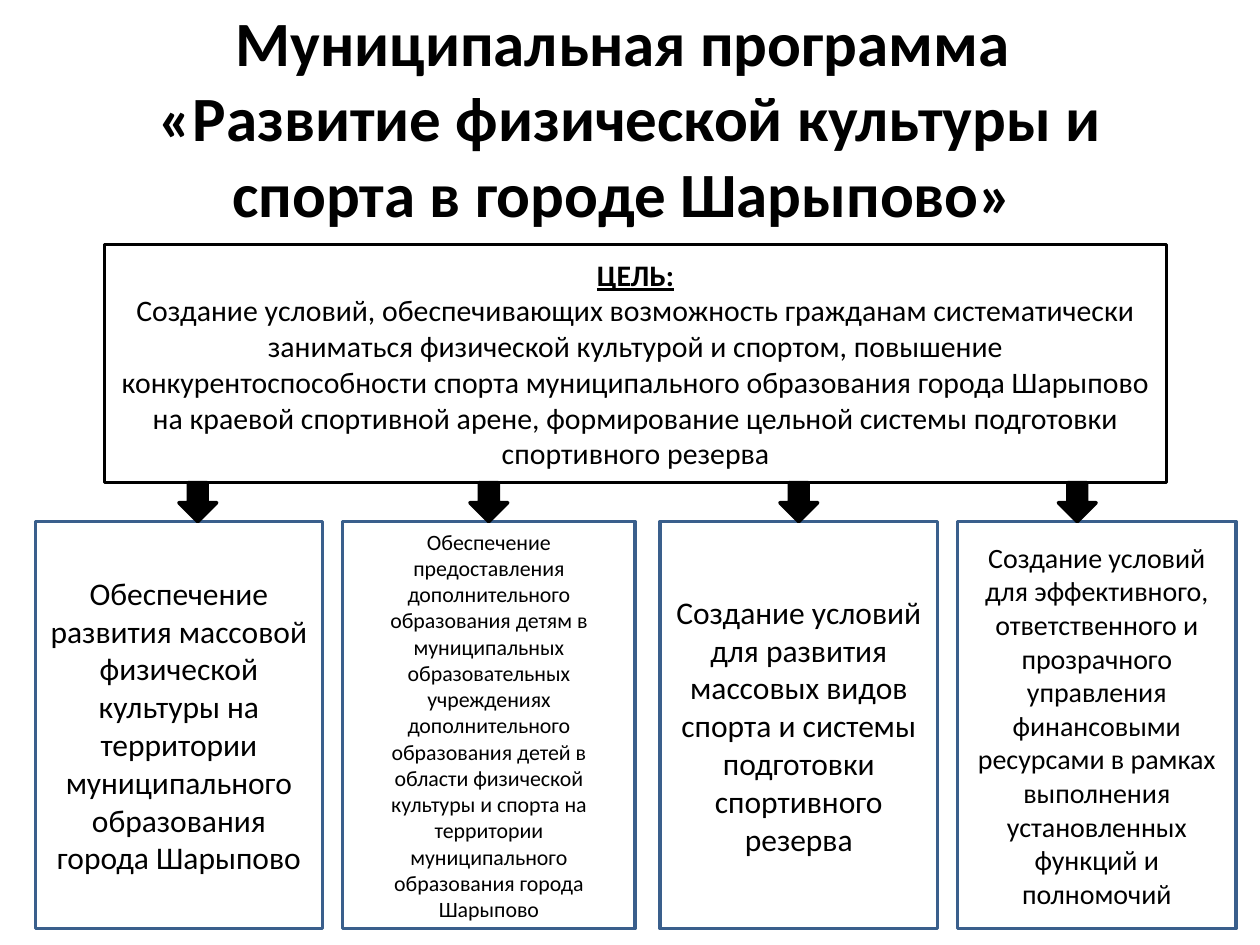
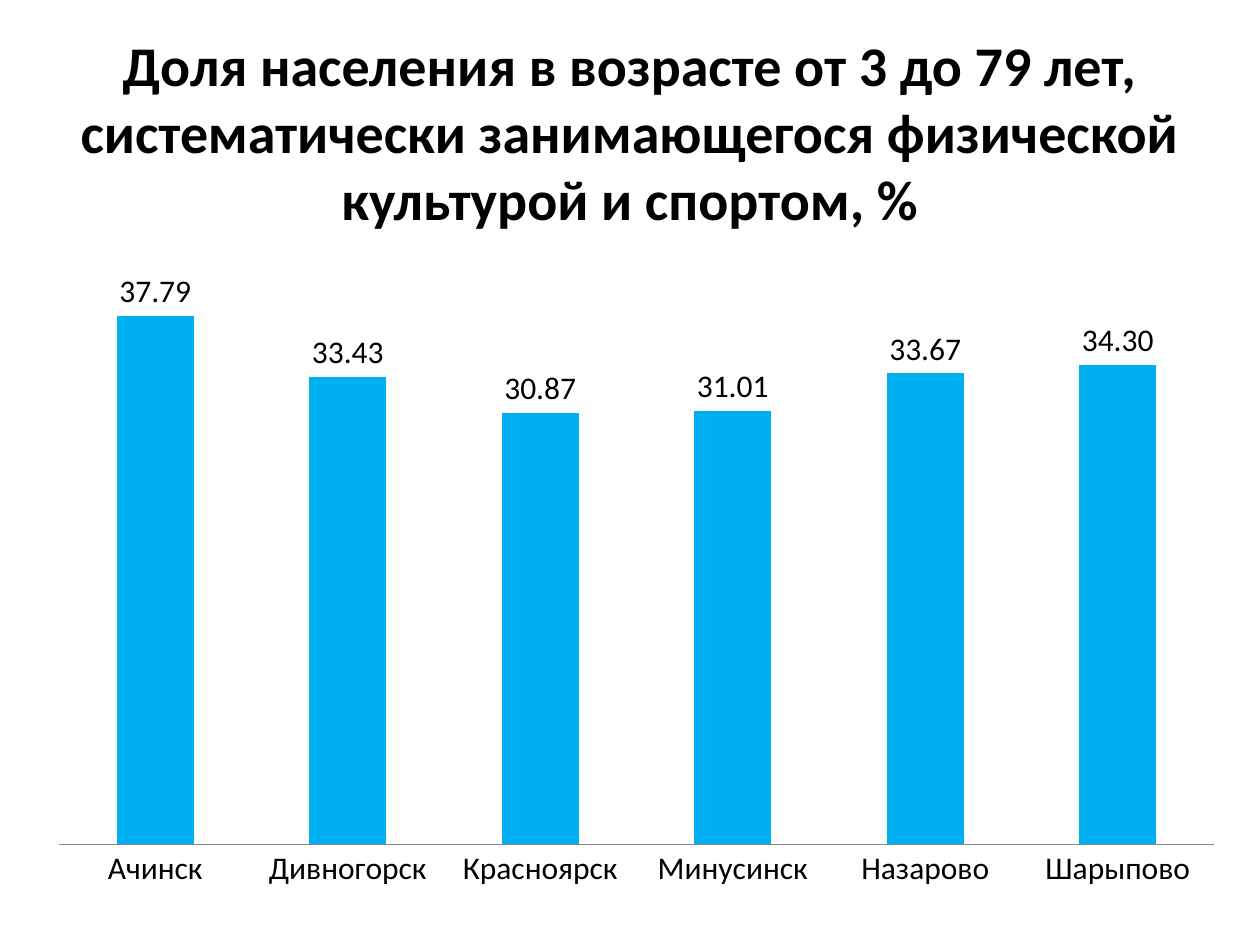
from lxml import etree
from pptx import Presentation
from pptx.chart.data import CategoryChartData
from pptx.dml.color import RGBColor
from pptx.enum.chart import XL_CHART_TYPE, XL_LABEL_POSITION, XL_TICK_MARK
from pptx.enum.shapes import MSO_SHAPE
from pptx.enum.text import MSO_ANCHOR, MSO_AUTO_SIZE, PP_ALIGN
from pptx.oxml import parse_xml
from pptx.oxml.ns import nsdecls, qn
from pptx.util import Inches, Pt

COLUMN = XL_CHART_TYPE.COLUMN_CLUSTERED
OUTSIDE = XL_LABEL_POSITION.OUTSIDE_END
NO_TICK = XL_TICK_MARK.NONE
RECT = MSO_SHAPE.RECTANGLE
ARROW = MSO_SHAPE.DOWN_ARROW
MIDDLE = MSO_ANCHOR.MIDDLE
NO_FIT = MSO_AUTO_SIZE.NONE
CENTER = PP_ALIGN.CENTER

FONT = "Calibri"
BLACK, WHITE = "000000", "FFFFFF"
NAVY, SKY, GRAY = "3A5F8C", "00B0F0", "868686"


def rgb(code):
    return RGBColor.from_string(code)


def style(font, size, bold=False, line=False, color=BLACK):
    font.name, font.size = FONT, Pt(size)
    font.bold, font.underline = bold, line
    font.color.rgb = rgb(color)


def write(frame, text, first=False, **form):
    """Fill the first paragraph of a frame or add one more."""
    para = frame.paragraphs[0] if first else frame.add_paragraph()
    para.text = text
    para.alignment = CENTER
    for run in para.runs:
        style(run.font, **form)


class Deck:
    def __init__(self):
        self.prs = Presentation()
        self.prs.slide_width, self.prs.slide_height = Inches(10), Inches(7.5)
        self.slide = None

    def frame(self, shape):
        frame = shape.text_frame
        frame.word_wrap = True
        frame.auto_size = NO_FIT
        frame.vertical_anchor = MIDDLE
        return frame

    def page(self, text, height, size):
        """Start a slide with its title."""
        self.slide = self.prs.slides.add_slide(self.prs.slide_layouts[5])
        title = self.slide.shapes.title
        title.left, title.top = Inches(0.5), Inches(0.3)
        title.width, title.height = Inches(9), Inches(height)
        write(self.frame(title), text, first=True, size=size, bold=True)

    def shape(self, kind, place, fill, edge):
        shape = self.slide.shapes.add_shape(kind, *map(Inches, place))
        shape.shadow.inherit = False
        shape.fill.solid()
        shape.fill.fore_color.rgb = rgb(fill)
        shape.line.color.rgb = rgb(edge)
        shape.line.width = Pt(2)
        return shape

    def box(self, place, edge, lines):
        frame = self.frame(self.shape(RECT, place, WHITE, edge))
        for i, (text, form) in enumerate(lines):
            write(frame, text, first=i == 0, **form)

    def bars(self, place, rows, top, plot):
        data = CategoryChartData(number_format="0.00")
        data.categories = [name for name, _ in rows]
        data.add_series("Доля населения, %", [value for _, value in rows])
        chart = self.slide.shapes.add_chart(
            COLUMN, *map(Inches, place), data).chart
        chart.has_legend = chart.has_title = False
        style(chart.font, 10)

        # Axes
        cat, val = chart.category_axis, chart.value_axis
        cat.major_tick_mark = cat.minor_tick_mark = NO_TICK
        cat.format.line.color.rgb = rgb(GRAY)
        style(cat.tick_labels.font, 18)
        val.minimum_scale, val.maximum_scale = 0, top
        val.has_major_gridlines = False
        val.visible = False

        # Columns and their labels
        group = chart.plots[0]
        group.gap_width, group.overlap = 150, -25
        group.vary_by_categories = False
        fill = group.series[0].format.fill
        fill.solid()
        fill.fore_color.rgb = rgb(SKY)
        group.has_data_labels = True
        labels = group.data_labels
        labels.show_value = True
        labels.position = OUTSIDE
        labels.number_format, labels.number_format_is_linked = "0.00", False
        style(labels.font, 18)

        # Inner plot area
        area = chart._chartSpace.chart.plotArea
        for old in area.findall(qn("c:layout")):
            area.remove(old)
        layout = parse_xml(f"<c:layout {nsdecls('c')}/>")
        manual = etree.SubElement(layout, qn("c:manualLayout"))
        parts = [("layoutTarget", "inner"), ("xMode", "edge"),
                 ("yMode", "edge"), *zip("xywh", plot)]
        for tag, value in parts:
            etree.SubElement(manual, qn(f"c:{tag}")).set("val", str(value))
        area.insert(0, layout)


GOAL = ("Создание условий, обеспечивающих возможность гражданам систематически "
        "заниматься физической культурой и спортом, повышение "
        "конкурентоспособности спорта муниципального образования города "
        "Шарыпово на краевой спортивной арене, формирование цельной системы "
        "подготовки спортивного резерва")

# Left edge, width, arrow left edge, text size, text
TASKS = [
    (0.28, 2.28, 1.42, 18,
     "Обеспечение развития массовой физической культуры на территории "
     "муниципального образования города Шарыпово"),
    (2.72, 2.32, 3.73, 12.5,
     "Обеспечение предоставления дополнительного образования детям в "
     "муниципальных образовательных учреждениях дополнительного образования "
     "детей в области физической культуры и спорта на территории "
     "муниципального образования города Шарыпово"),
    (5.24, 2.2, 6.19, 18,
     "Создание условий для развития массовых видов спорта и системы "
     "подготовки спортивного резерва"),
    (7.6, 2.21, 8.4, 16,
     "Создание условий для эффективного, ответственного и прозрачного "
     "управления финансовыми ресурсами в рамках выполнения установленных "
     "функций и полномочий"),
]

TOWNS = [("Ачинск", 37.79), ("Дивногорск", 33.43), ("Красноярск", 30.87),
         ("Минусинск", 31.01), ("Назарово", 33.67), ("Шарыпово", 34.3)]


def main():
    deck = Deck()

    # Goal and tasks of the programme
    deck.page("Муниципальная программа \v«Развитие физической культуры и "
              "спорта в городе Шарыпово» ", 1.25, 36)
    deck.box((0.83, 1.94, 8.43, 1.89), BLACK,
             [("ЦЕЛЬ:", dict(size=17, bold=True, line=True)),
              (GOAL, dict(size=17))])
    for left, width, tip, size, text in TASKS:
        deck.box((left, 4.14, width, 3.23), NAVY, [(text, dict(size=size))])
        deck.shape(ARROW, (tip, 3.83, 0.3, 0.31), BLACK, BLACK)

    # Share of people who do sport, by town
    deck.page("Доля населения в возрасте от 3 до 79 лет, систематически "
              "занимающегося физической культурой и спортом, %", 1.48, 32)
    deck.bars((0.28, 1.94, 9.45, 5.35), TOWNS, 40, (0.02, 0.06, 0.97, 0.83))

    deck.prs.save("out.pptx")


if __name__ == "__main__":
    main()
